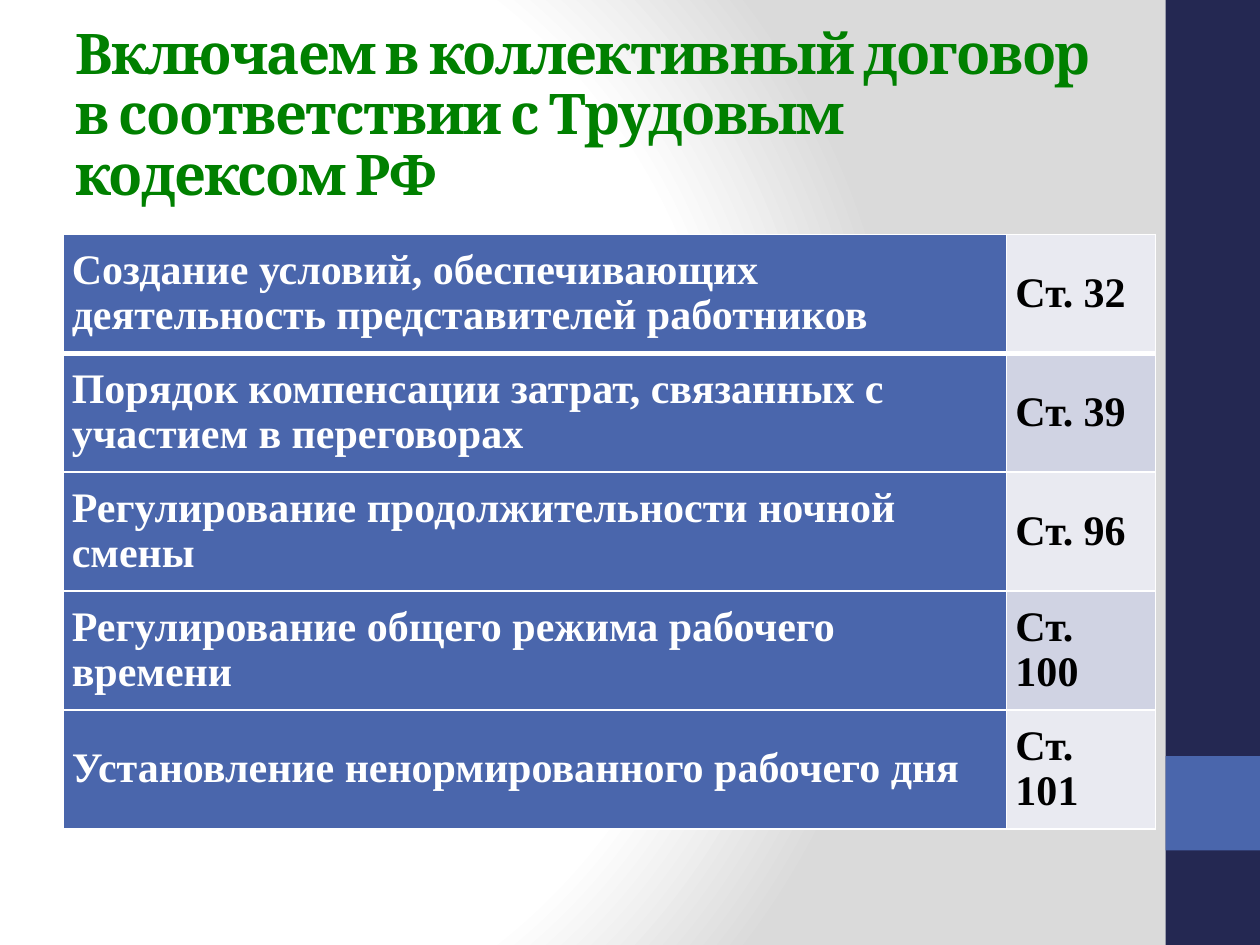
from dataclasses import dataclass

from lxml import etree
from pptx import Presentation
from pptx import util as u
from pptx.dml.color import RGBColor
from pptx.enum import shapes, text
from pptx.oxml import parse_xml
from pptx.oxml.ns import qn


@dataclass(frozen=True)
class Theme:
    navy: str = "242852"
    blue: str = "4A66AC"
    green: str = "008000"
    white: str = "FFFFFF"
    black: str = "000000"
    gray: str = "DADADA"
    bands: tuple = ("E9EAF1", "D0D3E3")
    head: str = "Cambria"
    body: str = "Times New Roman"
    big: int = 32
    mid: int = 24


T = Theme()
ROWS = (
    ("Создание условий, обеспечивающих деятельность представителей работников", "Ст. 32"),
    ("Порядок компенсации затрат, связанных с участием в переговорах", "Ст. 39"),
    ("Регулирование продолжительности ночной смены", "Ст. 96"),
    ("Регулирование общего режима рабочего времени", "Ст. 100"),
    ("Установление ненормированного рабочего дня", "Ст. 101"),
)


def rgb(tone):
    return RGBColor.from_string(tone)


def apply(item, form):
    for name, value in form.items():
        setattr(item, name, value)


def write(frame, words, face, size, tone, gap):
    para = frame.paragraphs[0]
    para.line_spacing = gap
    run = para.add_run()
    run.text = words
    apply(run.font, {"name": face, "size": u.Pt(size), "bold": True})
    run.font.color.rgb = rgb(tone)
    return run


def backdrop(slide):
    fill = slide.background.fill
    fill.gradient()
    old = slide.element.find(".//" + qn("a:gradFill"))
    stops = "".join(
        f'<a:gs pos="{spot * 1000}"><a:srgbClr val="{tone}"/></a:gs>'
        for spot, tone in ((0, T.white), (75, T.white), (100, T.gray))
    )
    new = parse_xml(
        '<a:gradFill xmlns:a="http://schemas.openxmlformats.org/drawingml/2006/main" '
        f'rotWithShape="1"><a:gsLst>{stops}</a:gsLst><a:path path="circle">'
        '<a:fillToRect l="20000" t="50000" r="100000" b="50000"/></a:path></a:gradFill>'
    )
    old.getparent().replace(old, new)


def block(slide, top, tall, tone):
    bar = slide.shapes.add_shape(
        shapes.MSO_SHAPE.RECTANGLE,
        u.Inches(9.25), u.Inches(top), u.Inches(0.75), u.Inches(tall),
    )
    bar.shadow.inherit = False
    bar.fill.solid()
    bar.fill.fore_color.rgb = rgb(tone)
    bar.line.fill.background()


def title(slide, words):
    box = slide.shapes.add_textbox(
        u.Inches(0.5), u.Inches(0.3), u.Inches(8.33), u.Inches(1.25)
    )
    apply(box.text_frame, {
        "word_wrap": True,
        "vertical_anchor": text.MSO_ANCHOR.MIDDLE,
    })
    run = write(box.text_frame, words, T.head, T.big, T.green, 0.9)
    run.font._element.set("spc", "-100")


def border(cell, side, width):
    props = cell._tc.get_or_add_tcPr()
    line = etree.SubElement(props, qn("a:ln" + side), w=str(u.Pt(width)))
    fill = etree.SubElement(line, qn("a:solidFill"))
    etree.SubElement(fill, qn("a:srgbClr"), val=T.white)


def fill_cell(cell, words, tone, ink, row):
    apply(cell, {
        "margin_left": u.Inches(0.07),
        "margin_right": u.Inches(0.07),
        "margin_top": 0,
        "margin_bottom": 0,
        "vertical_anchor": text.MSO_ANCHOR.MIDDLE,
    })
    wide = {"T": row == 1, "B": row == 0}
    for side in "LRTB":
        border(cell, side, 3 if wide.get(side) else 1)
    cell.fill.solid()
    cell.fill.fore_color.rgb = rgb(tone)
    write(cell.text_frame, words, T.body, T.mid, ink, 0.97)


def grid(slide, rows):
    table = slide.shapes.add_table(
        len(rows), 2, u.Inches(0.5), u.Inches(1.86), u.Inches(8.67), u.Inches(4.72)
    ).table
    apply(table, {"first_row": False, "horz_banding": False})
    for col, width in zip(table.columns, (7.49, 1.18)):
        col.width = u.Inches(width)
    for row, (topic, clause) in enumerate(rows):
        fill_cell(table.cell(row, 0), topic, T.blue, T.white, row)
        fill_cell(table.cell(row, 1), clause, T.bands[row % 2], T.black, row)


def main():
    deck = Presentation()
    apply(deck, {"slide_width": u.Inches(10), "slide_height": u.Inches(7.5)})
    slide = deck.slides.add_slide(deck.slide_layouts[6])
    backdrop(slide)
    block(slide, 0, 7.5, T.navy)
    block(slide, 6, 0.75, T.blue)
    title(slide, "Включаем в коллективный договор в соответствии с Трудовым кодексом РФ")
    grid(slide, ROWS)
    deck.save("out.pptx")


if __name__ == "__main__":
    main()
